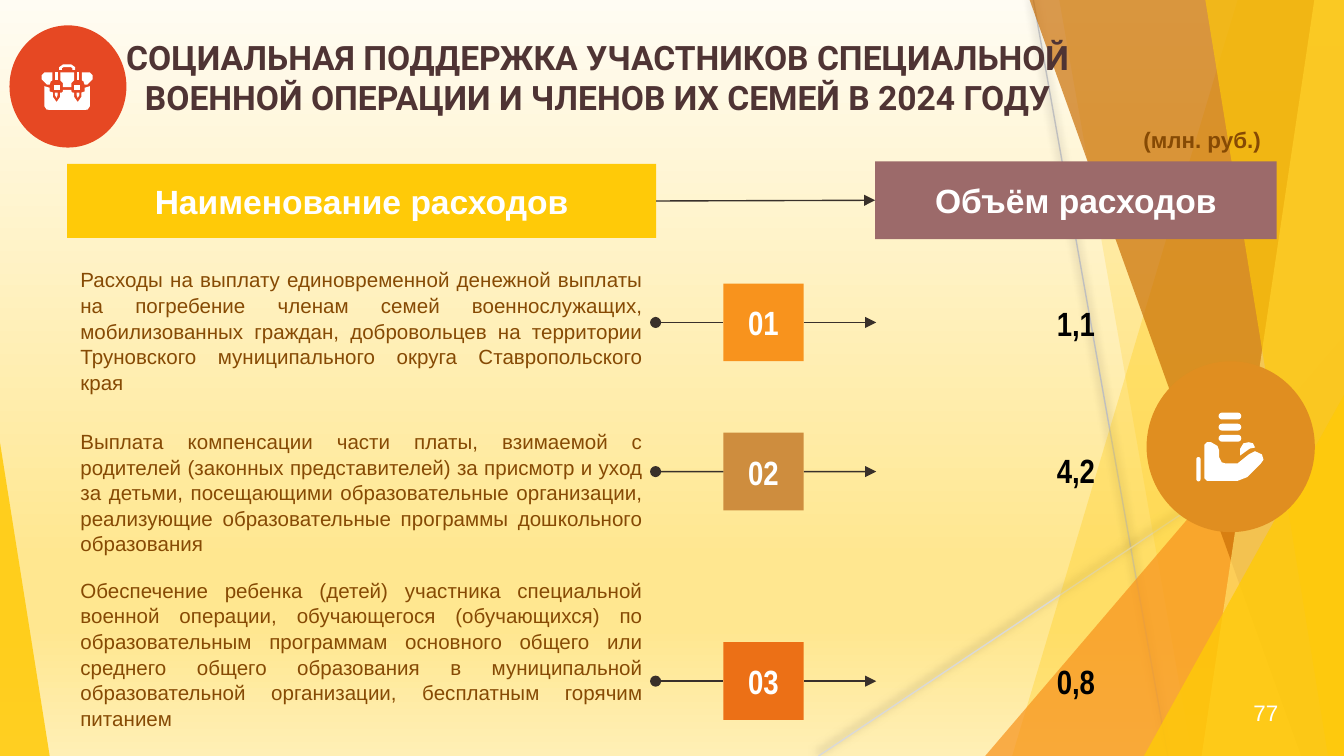
"""Build the slide on social support spending for 2024."""
import pptx
import pptx.dml.color
import pptx.enum.shapes
import pptx.enum.text
import pptx.oxml
import pptx.oxml.ns
import pptx.util

Cm = pptx.util.Cm
qn = pptx.oxml.ns.qn
SHAPES = pptx.enum.shapes.MSO_SHAPE
ALIGN = pptx.enum.text.PP_ALIGN
ANCHOR = pptx.enum.text.MSO_ANCHOR
WIDTH, HEIGHT = 25.4, 14.29


def color(value):
    return pptx.dml.color.RGBColor.from_string(value)


def element(markup):
    return pptx.oxml.parse_xml(markup.replace(" ", f" {pptx.oxml.ns.nsdecls('a')} ", 1))


def mirror(points):
    return [(2.54 - x, y) for x, y in points]


class SlideBuilder:
    ink, brown, white, gold = "39302A", "864A04", "FFFFFF", "FFCA08"

    def __init__(self, slide):
        self.slide = slide

    def background(self, stops):
        fill = self.slide.background.fill
        fill.gradient()
        fill.gradient_angle = 270
        stop_list = self.slide._element.find(".//" + qn("a:gsLst"))
        for stop in list(stop_list):
            stop_list.remove(stop)
        for position, value in stops:
            stop_list.append(element(
                f'<a:gs pos="{position * 1000}"><a:srgbClr val="{value}"/></a:gs>'))

    def paint(self, shape, fill, opacity=100):
        shape.shadow.inherit = False
        shape.fill.solid()
        shape.fill.fore_color.rgb = color(fill)
        shape.line.fill.background()
        if opacity < 100:
            value = shape._element.spPr.find(".//" + qn("a:srgbClr"))
            value.append(element(f'<a:alpha val="{opacity * 1000}"/>'))
        return shape

    def shape(self, kind, box, fill, opacity=100, adjustment=None):
        shape = self.slide.shapes.add_shape(kind, *map(Cm, box))
        if adjustment is not None:
            shape.adjustments[0] = adjustment
        return self.paint(shape, fill, opacity)

    def outline(self, points, fill, opacity=100):
        corners = [(Cm(x), Cm(y)) for x, y in points]
        builder = self.slide.shapes.build_freeform(*corners[0], scale=1.0)
        builder.add_line_segments(corners[1:], close=True)
        return self.paint(builder.convert_to_shape(), fill, opacity)

    def band(self, top, bottom, fill, opacity):
        self.outline([(top, 0), (WIDTH, 0), (WIDTH, HEIGHT), (bottom, HEIGHT)], fill, opacity)

    def set_text(self, shape, text, size, font, value, bold=False, align=ALIGN.CENTER,
                 anchor=ANCHOR.MIDDLE, inset=0.25, wrap=True, spacing=None):
        frame = shape.text_frame
        frame.auto_size = pptx.enum.text.MSO_AUTO_SIZE.NONE
        frame.word_wrap = wrap
        frame.vertical_anchor = anchor
        frame.margin_left = frame.margin_right = Cm(0.25)
        frame.margin_top = frame.margin_bottom = Cm(inset)
        frame.text = text
        paragraph = frame.paragraphs[0]
        paragraph.alignment = align
        if spacing:
            paragraph.line_spacing = spacing
        run = paragraph.runs[0]
        run.font.size = pptx.util.Pt(size)
        run.font.name = font
        run.font.bold = bold
        run.font.color.rgb = color(value)

    def title(self, box, text):
        title = self.slide.shapes.title
        title.left, title.top, title.width, title.height = map(Cm, box)
        self.slide.shapes._spTree.append(title._element)
        self.set_text(title, text, 18, "Roboto", "4F3434", True)

    def block(self, box, fill, text, font="Arial"):
        shape = self.shape(SHAPES.RECTANGLE, box, fill)
        self.set_text(shape, text, 18, font, self.white, True)
        return shape

    def text(self, box, text, size, font, value, **options):
        shape = self.slide.shapes.add_textbox(*map(Cm, box))
        self.set_text(shape, text, size, font, value, **options)

    def line(self, start, end, value=ink, begin=None, finish=None, head=None, tail=None,
             shadow=""):
        connector = self.slide.shapes.add_connector(
            pptx.enum.shapes.MSO_CONNECTOR.STRAIGHT, *map(Cm, start + end))
        if begin:
            connector.begin_connect(begin, 3)
        if finish:
            connector.end_connect(finish, 1)
        connector.line.color.rgb = color(value)
        connector.line.width = pptx.util.Pt(0.75)
        properties = connector._element.spPr
        for tag, kind in (("headEnd", head), ("tailEnd", tail)):
            if kind:
                properties.find(qn("a:ln")).append(element(f'<a:{tag} type="{kind}"/>'))
        properties.append(element(f'<a:effectLst >{shadow}</a:effectLst>'))

    def decoration(self):
        shadow = ('<a:outerShdw blurRad="63500" dist="25400" dir="14700000">'
                  '<a:srgbClr val="000000"><a:alpha val="50000"/></a:srgbClr></a:outerShdw>')
        self.line((19.53, 0), (22.07, HEIGHT), "BFBFBF", shadow=shadow)
        self.line((WIDTH, 7.67), (15.47, HEIGHT), "D9D9D9", shadow=shadow)
        triangle = SHAPES.ISOSCELES_TRIANGLE
        self.band(23.39, 19.13, self.gold, 30)
        self.band(20.02, 22.53, self.gold, 20)
        self.shape(triangle, (18.62, 6.35, 6.78, 7.94), "F8931D", 72, 1)
        self.band(19.46, 24.59, "CA6F06", 70)
        self.band(24.84, 22.71, "FFDF6B", 70)
        self.band(22.78, 25.1, self.gold, 65)
        self.shape(triangle, (21.62, 7.47, 3.78, 6.82), self.gold, 80, 1)
        self.shape(triangle, (0, 8.36, 0.94, 5.93), self.gold, 85, 0)

    def hand_icon(self):
        self.shape(SHAPES.OVAL, (21.67, 6.83, 3.18, 3.23), "E08E20")
        self.outline([(23.44, 8.48), (23.5, 8.38), (23.6, 8.36), (23.68, 8.38), (23.72, 8.46),
                      (23.62, 8.48), (23.55, 8.53), (23.44, 8.61)], self.white)
        self.outline([(22.81, 8.36), (22.89, 8.36), (23.01, 8.43), (23.04, 8.51), (23.04, 8.64),
                      (23.09, 8.74), (23.16, 8.76), (23.39, 8.76), (23.6, 8.59), (23.72, 8.53),
                      (23.85, 8.59), (23.88, 8.69), (23.83, 8.76), (23.57, 9.02), (23.39, 9.09),
                      (22.81, 9.09), (22.76, 9.04), (22.76, 8.41)], self.white)
        cuff = (22.61, 8.64, 0.08, 0.46)
        coins = [(23.03, top, 0.43, 0.13) for top in (7.8, 8.01, 8.22)]
        for box in [cuff] + coins:
            self.shape(SHAPES.ROUNDED_RECTANGLE, box, self.white, adjustment=0.5)

    def briefcase_icon(self):
        self.shape(SHAPES.OVAL, (0.18, 0.48, 2.21, 2.31), "E64823")
        body = [(1.27, 1.7), (1.19, 1.7), (1.19, 1.73), (1.17, 1.75), (1.14, 1.75), (1.14, 1.83),
                (1.07, 1.93), (1, 1.83), (1, 1.75), (0.94, 1.73), (0.94, 1.66), (0.84, 1.63),
                (0.84, 2.01), (0.88, 2.07), (0.94, 2.08), (1.27, 2.08)]
        flap = [(1.27, 1.37), (1.14, 1.37), (1.14, 1.52), (1.19, 1.57), (1.19, 1.65), (1.27, 1.65)]
        handle = [(1.27, 1.22), (1.19, 1.22), (1.12, 1.27), (1.12, 1.32), (1.17, 1.32),
                  (1.17, 1.29), (1.2, 1.27), (1.27, 1.27)]
        for half in (body, flap, handle):
            self.outline(half + mirror(half)[::-1], self.white)
        side = [(0.84, 1.37), (0.79, 1.42), (0.79, 1.5), (0.89, 1.6), (0.94, 1.6), (0.96, 1.54),
                (0.99, 1.52), (0.99, 1.37)]
        strap = [(1.04, 1.37), (1.09, 1.37), (1.09, 1.52), (1.04, 1.52)]
        buckle = [(1.02, 1.6), (1.14, 1.6), (1.14, 1.7), (1.02, 1.7)]
        tip = [(1.04, 1.75), (1.04, 1.8), (1.07, 1.85), (1.09, 1.8), (1.09, 1.75)]
        for part in (side, strap, buckle, tip):
            self.outline(part, self.white)
            self.outline(mirror(part), self.white)

    def expense(self, number, fill, top, text_top, text_height, text, value_top, value):
        middle = top + 0.735
        badge = self.block((13.67, top, 1.52, 1.47), fill, number, "Arial Narrow")
        self.text((1.27, text_top, 11.13, text_height), text, 11, "Arial", self.brown,
                  align=ALIGN.JUSTIFY, spacing=1.04)
        self.text((16.54, value_top, 7.59, 0.76), value, 18, "Arial Narrow", "000000", bold=True)
        self.line((12.39, middle), (13.67, middle), finish=badge, head="oval")
        self.line((15.19, middle), (16.56, middle), begin=badge, tail="triangle")


def main():
    presentation = pptx.Presentation()
    presentation.slide_width, presentation.slide_height = Cm(WIDTH), Cm(HEIGHT)
    builder = SlideBuilder(presentation.slides.add_slide(presentation.slide_layouts[5]))
    builder.background([(0, "FFFCF3"), (74, "FFE790"), (83, "FFE790"), (100, "FFEFB5")])
    builder.decoration()
    builder.title((1.8, 0.94, 19, 1.04), "СОЦИАЛЬНАЯ ПОДДЕРЖКА УЧАСТНИКОВ СПЕЦИАЛЬНОЙ "
                  "ВОЕННОЙ ОПЕРАЦИИ И ЧЛЕНОВ ИХ СЕМЕЙ В 2024 ГОДУ")
    names = builder.block((1.27, 3.1, 11.13, 1.4), builder.gold, "Наименование расходов")
    amounts = builder.block((16.54, 3.05, 7.59, 1.47), "9C6A6A", "Объём расходов")
    builder.line((12.4, 3.8), (16.54, 3.78), begin=names, finish=amounts, tail="triangle")
    expenses = [
        ("01", "F8931D", 5.36, 5.23, 2.03,
         "Расходы на выплату единовременной денежной выплаты на погребение членам семей "
         "военнослужащих, мобилизованных граждан, добровольцев на территории Труновского "
         "муниципального округа Ставропольского края", 5.72, "1,1"),
        ("02", "CE8D3E", 8.18, 8.31, 1.98,
         "Выплата компенсации части платы, взимаемой с родителей (законных представителей) "
         "за присмотр и уход за детьми, посещающими образовательные организации, реализующие "
         "образовательные программы дошкольного образования", 8.51, "4,2"),
        ("03", "EC7016", 12.14, 11.25, 2.21,
         "Обеспечение ребенка (детей) участника специальной военной операции, обучающегося "
         "(обучающихся) по образовательным программам основного общего или среднего общего "
         "образования в муниципальной образовательной организации, бесплатным горячим питанием",
         12.5, "0,8")]
    for expense in expenses:
        builder.expense(*expense)
    corner = {"align": ALIGN.LEFT, "anchor": ANCHOR.TOP, "inset": 0.13}
    builder.text((21.36, 2.26, 2.77, 0.76), "(млн. руб.)", 12, "Arial", builder.brown,
                 bold=True, wrap=False, **corner)
    builder.hand_icon()
    builder.text((23.44, 13.08, 1.42, 0.76), "77", 12, "Arial", builder.white, **corner)
    builder.briefcase_icon()
    presentation.save("out.pptx")


if __name__ == "__main__":
    main()
